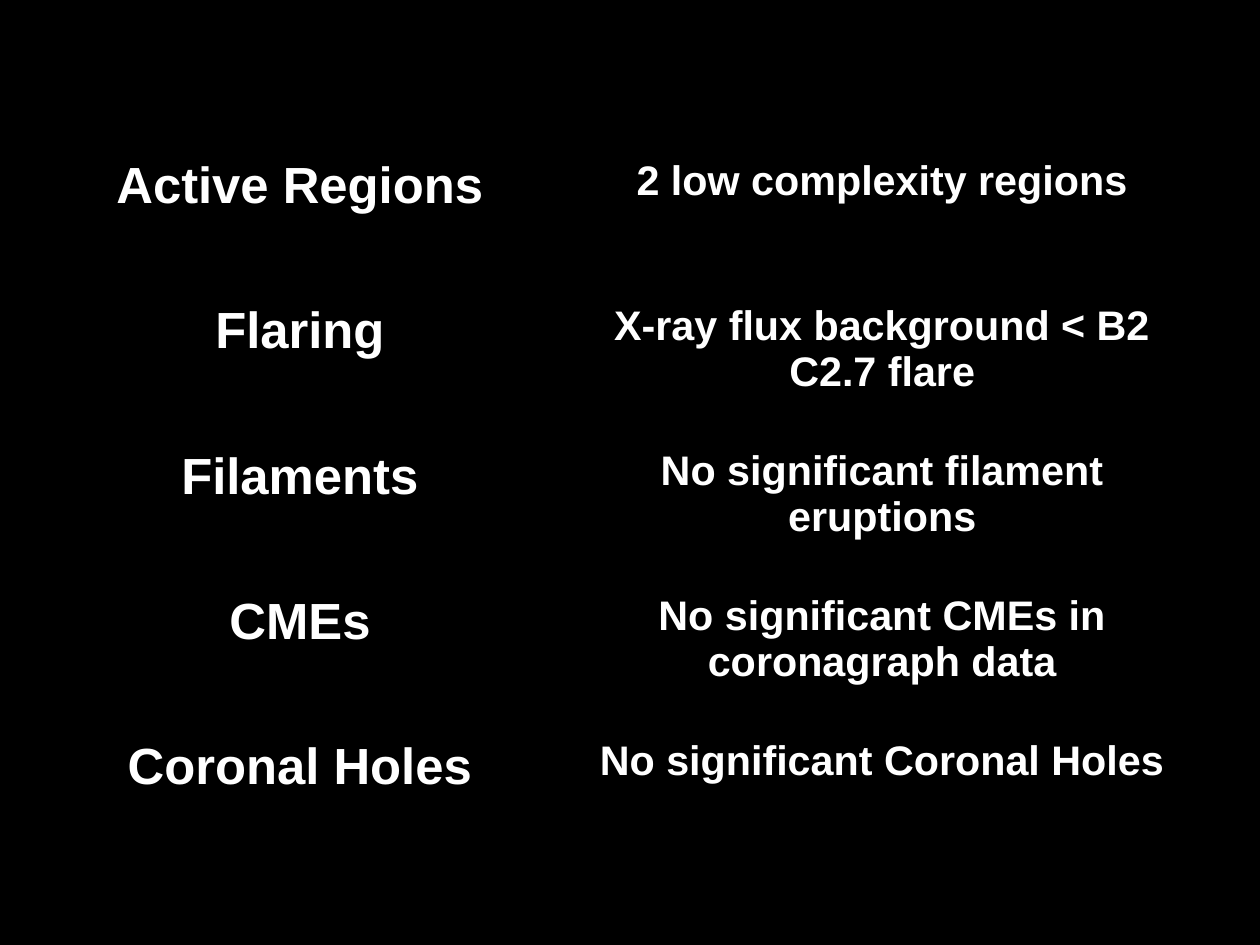
import dataclasses

import lxml.etree
import pptx
import pptx.dml.color
import pptx.enum.text
import pptx.oxml.ns
import pptx.table
import pptx.util

Inches = pptx.util.Inches


@dataclasses.dataclass
class Topic:
    name: str
    status: str


TOPICS = [
    Topic("Active Regions", "2 low complexity regions"),
    Topic("Flaring", "X-ray flux background < B2\nC2.7 flare"),
    Topic("Filaments", "No significant filament eruptions"),
    Topic("CMEs", "No significant CMEs in coronagraph data"),
    Topic("Coronal Holes", "No significant Coronal Holes"),
]
WIDTHS = [4.37, 5.82]
HEIGHT = 1.27
CM = 1 / 2.54


def color(code: str) -> pptx.dml.color.RGBColor:
    return pptx.dml.color.RGBColor.from_string(code)


def write(frame, text: str, *, size: float, ink: str = "FFFFFF",
          bold: bool = True, face: str = "Arial") -> None:
    """Fill the frame with centred text, one paragraph a line."""
    frame.text = text
    for line in frame.paragraphs:
        line.alignment = pptx.enum.text.PP_ALIGN.CENTER
        for run in line.runs:
            run.font.size = pptx.util.Pt(size)
            run.font.bold = bold
            run.font.name = face
            run.font.color.rgb = color(ink)


def clear(cell: pptx.table._Cell) -> None:
    """Remove the borders and fill that the table style gives."""
    props = cell._tc.get_or_add_tcPr()
    for side in ("a:lnL", "a:lnR", "a:lnT", "a:lnB"):
        edge = lxml.etree.SubElement(props, pptx.oxml.ns.qn(side), w="0")
        lxml.etree.SubElement(edge, pptx.oxml.ns.qn("a:noFill"))
    cell.fill.background()


def main() -> None:
    deck = pptx.Presentation()
    deck.slide_width = Inches(28 * CM)
    deck.slide_height = Inches(21 * CM)
    slide = deck.slides.add_slide(deck.slide_layouts[6])
    slide.background.fill.solid()
    slide.background.fill.fore_color.rgb = color("000000")

    table = slide.shapes.add_table(
        len(TOPICS), len(WIDTHS), Inches(0.44), Inches(1.33),
        Inches(sum(WIDTHS)), Inches(HEIGHT * len(TOPICS))).table
    table.first_row = False
    table.horz_banding = False
    for column, width in zip(table.columns, WIDTHS):
        column.width = Inches(width)
    for index, topic in enumerate(TOPICS):
        table.rows[index].height = Inches(HEIGHT)
        name, status = table.rows[index].cells
        write(name.text_frame, topic.name, size=32)
        write(status.text_frame, topic.status, size=26)
    for cell in table.iter_cells():
        clear(cell)

    deck.save("out.pptx")


if __name__ == "__main__":
    main()
